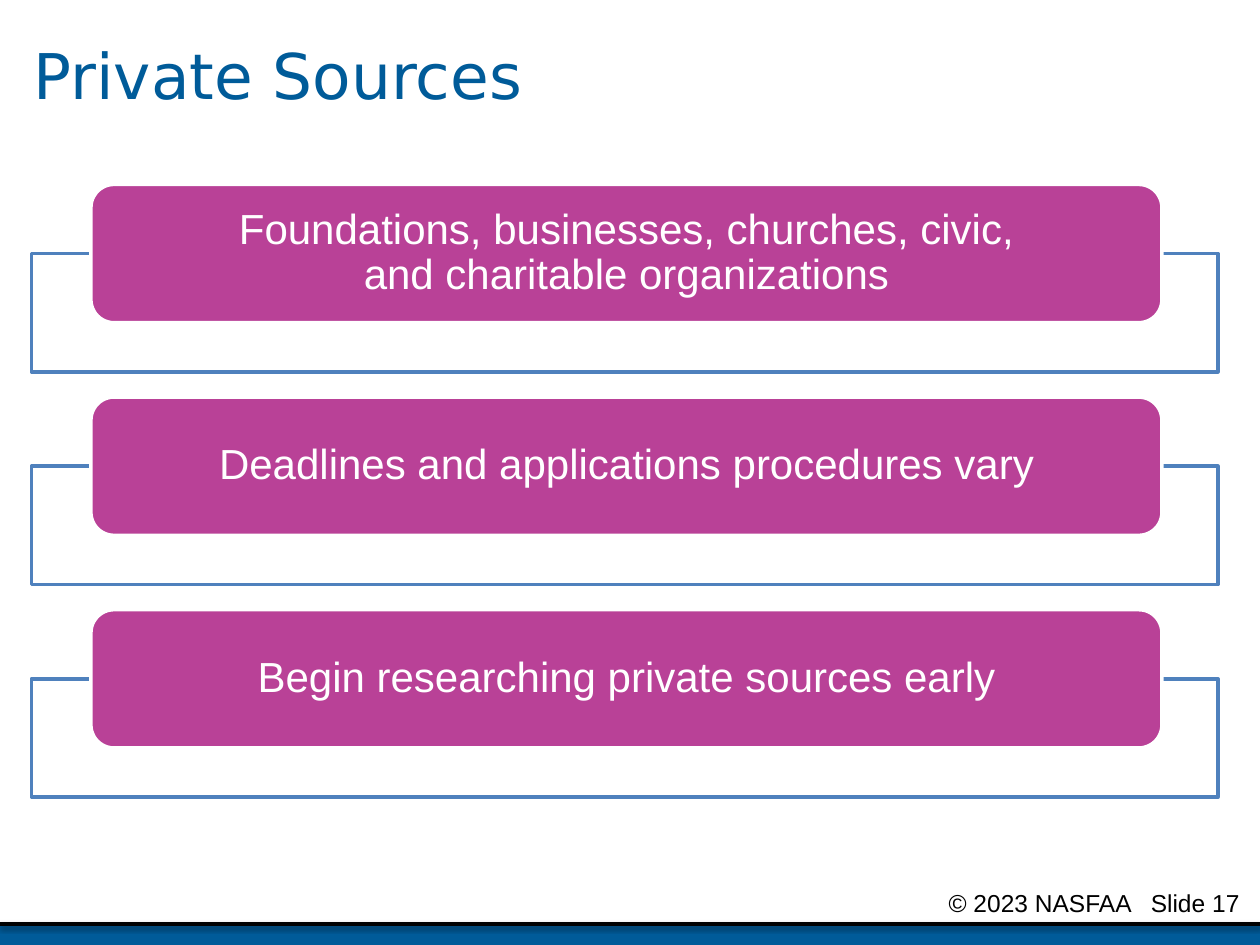
from lxml import etree
from pptx import Presentation
from pptx.dml.color import RGBColor
from pptx.enum.shapes import MSO_CONNECTOR, MSO_SHAPE
from pptx.enum.text import MSO_ANCHOR, PP_ALIGN
from pptx.oxml import parse_xml
from pptx.oxml.ns import nsdecls, qn
from pptx.util import Pt

RECT, ROUNDED = MSO_SHAPE.RECTANGLE, MSO_SHAPE.ROUNDED_RECTANGLE
STRAIGHT = MSO_CONNECTOR.STRAIGHT
MIDDLE = MSO_ANCHOR.MIDDLE
LEFT, CENTER = PP_ALIGN.LEFT, PP_ALIGN.CENTER

COLORS = {
    "blue": "005B99",
    "frame": "4F81BD",
    "magenta": "B94197",
    "white": "FFFFFF",
    "black": "000000",
}


def rgb(name):
    return RGBColor.from_string(COLORS[name])


def add_block(kind, left, top, width, height, fill, line=None):
    block = slide.shapes.add_shape(kind, Pt(left), Pt(top), Pt(width), Pt(height))
    block.shadow.inherit = False
    block.fill.solid()
    block.fill.fore_color.rgb = rgb(fill)
    if line:
        block.line.color.rgb = rgb(line)
        block.line.width = Pt(2)
    else:
        block.line.fill.background()
    return block


prs = Presentation()
prs.slide_width, prs.slide_height = Pt(720), Pt(540)
slide = prs.slides.add_slide(prs.slide_layouts[5])

# Footer band with its shadowed rule
add_block(RECT, 0, 528, 720, 14.4, "blue")
rule = slide.shapes.add_connector(STRAIGHT, Pt(0), Pt(528), Pt(720), Pt(528))
rule.line.color.rgb = rgb("black")
rule.line.width = Pt(2)
rule._element.spPr.append(parse_xml(
    f'<a:effectLst {nsdecls("a")}>'
    f'<a:outerShdw blurRad="{Pt(3.1)}" dist="{Pt(1.6)}" dir="5400000" rotWithShape="0">'
    '<a:srgbClr val="000000"><a:alpha val="38000"/></a:srgbClr>'
    '</a:outerShdw></a:effectLst>'))

# Copyright and slide number, parted by a tab stop
footer = slide.shapes.add_textbox(Pt(535), Pt(504), Pt(185), Pt(18)).text_frame
footer.word_wrap = True
footer.margin_right = 0
footer.text = "© 2023 NASFAA\tSlide 17"
footer_line = footer.paragraphs[0]
footer_line.alignment = LEFT
tabs = etree.SubElement(footer_line._p.get_or_add_pPr(), qn("a:tabLst"))
etree.SubElement(tabs, qn("a:tab"), pos=str(Pt(115.5)), algn="l")
footer_line.font.name = "Arial"
footer_line.font.size = Pt(14)
footer_line.font.color.rgb = rgb("black")

# Title
title = slide.shapes.title
title.left, title.top, title.width, title.height = Pt(12), Pt(0), Pt(696), Pt(90)
title.text_frame.text = "Private Sources"
title.text_frame.vertical_anchor = MIDDLE
heading = title.text_frame.paragraphs[0]
heading.alignment = LEFT
heading.line_spacing = 0.9
heading.font.name = "DejaVu Sans"
heading.font.size = Pt(36)
heading.font.color.rgb = rgb("blue")

# Three points, each a label on the top edge of a frame
POINTS = [
    "Foundations, businesses, churches, civic,\vand charitable organizations",
    "Deadlines and applications procedures vary",
    "Begin researching private sources early",
]
FIRST_TOP, PITCH = 105.4, 121.5
LABEL_HEIGHT, FRAME_HEIGHT = 79, 67.6

for index, point in enumerate(POINTS):
    top = FIRST_TOP + index * PITCH
    frame = add_block(RECT, 18, top + LABEL_HEIGHT / 2, 678, FRAME_HEIGHT, "white", "frame")
    frame_color = frame._element.spPr.find(qn("a:solidFill"))[0]
    etree.SubElement(frame_color, qn("a:alpha"), val="90000")

    label = add_block(ROUNDED, 52, top, 612, LABEL_HEIGHT, "magenta", "white").text_frame
    label.word_wrap = True
    label.vertical_anchor = MIDDLE
    label.margin_left = label.margin_right = Pt(18)
    label.margin_top = label.margin_bottom = 0
    label.text = point
    wording = label.paragraphs[0]
    wording.alignment = CENTER
    wording.line_spacing = 0.9
    wording.font.name = "Arial"
    wording.font.size = Pt(24)
    wording.font.color.rgb = rgb("white")

prs.save("out.pptx")
